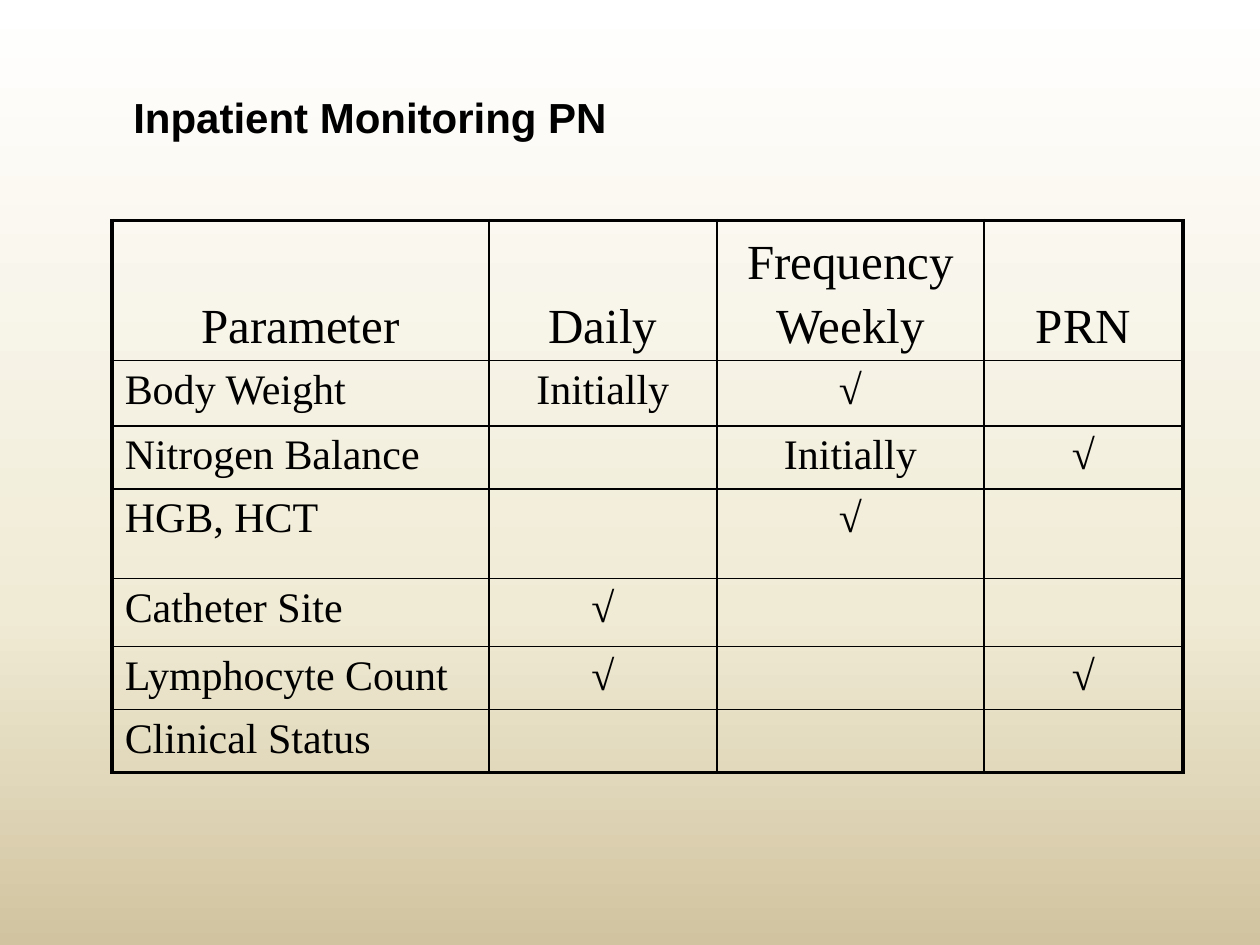
import copy

import lxml.etree
import pptx
import pptx.dml.color
import pptx.enum.text
import pptx.oxml.ns
import pptx.util

Inches = pptx.util.Inches
BLACK = "000000"


def color(hex_string):
    return pptx.dml.color.RGBColor.from_string(hex_string)


def add_border(cell, side, width):
    properties = cell._tc.get_or_add_tcPr()
    line = lxml.etree.SubElement(properties, pptx.oxml.ns.qn(f"a:ln{side}"), w=str(pptx.util.Pt(width)))
    fill = lxml.etree.SubElement(line, pptx.oxml.ns.qn("a:solidFill"))
    lxml.etree.SubElement(fill, pptx.oxml.ns.qn("a:srgbClr"), val=BLACK)


presentation = pptx.Presentation()
presentation.slide_width = Inches(10)
presentation.slide_height = Inches(7.5)
slide = presentation.slides.add_slide(presentation.slide_layouts[6])

# Background gradient, top to bottom
background = slide.background.fill
background.gradient()
background.gradient_angle = 270
first_stop = background.gradient_stops[0]._gs
first_stop.addnext(copy.deepcopy(first_stop))
stops = [(0, "FFFFFF"), (0.65, "F0EBD5"), (1, "D1C39F")]
for stop, (position, stop_color) in zip(background.gradient_stops, stops):
    stop.position = position
    stop.color.rgb = color(stop_color)

# Title
title = slide.shapes.add_textbox(Inches(0.96), Inches(0.3), Inches(8.54), Inches(1.25))
title.text_frame.word_wrap = True
title.text_frame.vertical_anchor = pptx.enum.text.MSO_ANCHOR.MIDDLE
run = title.text_frame.paragraphs[0].add_run()
run.text = "Inpatient Monitoring PN"
run.font.name = "Arial"
run.font.size = pptx.util.Pt(24)
run.font.bold = True
run.font.color.rgb = color(BLACK)

# Monitoring table
rows = [
    ["Parameter", "Daily", "Frequency\nWeekly", "PRN"],
    ["Body Weight", "Initially", "√", ""],
    ["Nitrogen Balance", "", "Initially", "√"],
    ["HGB, HCT", "", "√", ""],
    ["Catheter Site", "√", "", ""],
    ["Lymphocyte Count", "√", "", "√"],
    ["Clinical Status", "", "", ""],
]
column_widths = [2.99, 1.81, 2.12, 1.58]
row_heights = [1.04, 0.52, 0.5, 0.71, 0.54, 0.47, 0.47]
last_row, last_column = len(rows) - 1, len(column_widths) - 1

table = slide.shapes.add_table(
    len(rows), len(column_widths), Inches(0.89), Inches(1.75),
    Inches(sum(column_widths)), Inches(sum(row_heights))).table
table.first_row = False
table.horz_banding = False
for column, width in zip(table.columns, column_widths):
    column.width = Inches(width)
for row, height in zip(table.rows, row_heights):
    row.height = Inches(height)

for row_index, row in enumerate(rows):
    is_header = row_index == 0
    font_size = 28 if is_header else 24
    for column_index, text in enumerate(row):
        cell = table.cell(row_index, column_index)
        if is_header:
            cell.vertical_anchor = pptx.enum.text.MSO_ANCHOR.BOTTOM

        # Thick outer frame, thin inner lines
        outer_sides = {
            "L": column_index == 0,
            "R": column_index == last_column,
            "T": is_header,
            "B": row_index == last_row,
        }
        for side, is_outer in outer_sides.items():
            add_border(cell, side, 2.25 if is_outer else 1)
        cell.fill.background()

        # Cell text
        for line_index, line_text in enumerate(text.splitlines()):
            if line_index == 0:
                paragraph = cell.text_frame.paragraphs[0]
            else:
                paragraph = cell.text_frame.add_paragraph()
                paragraph.space_before = pptx.util.Pt(0.2 * font_size)
            if is_header or column_index > 0:
                paragraph.alignment = pptx.enum.text.PP_ALIGN.CENTER
            run = paragraph.add_run()
            run.text = line_text
            run.font.name = "Times New Roman"
            run.font.size = pptx.util.Pt(font_size)
            run.font.color.rgb = color(BLACK)

presentation.save("out.pptx")
